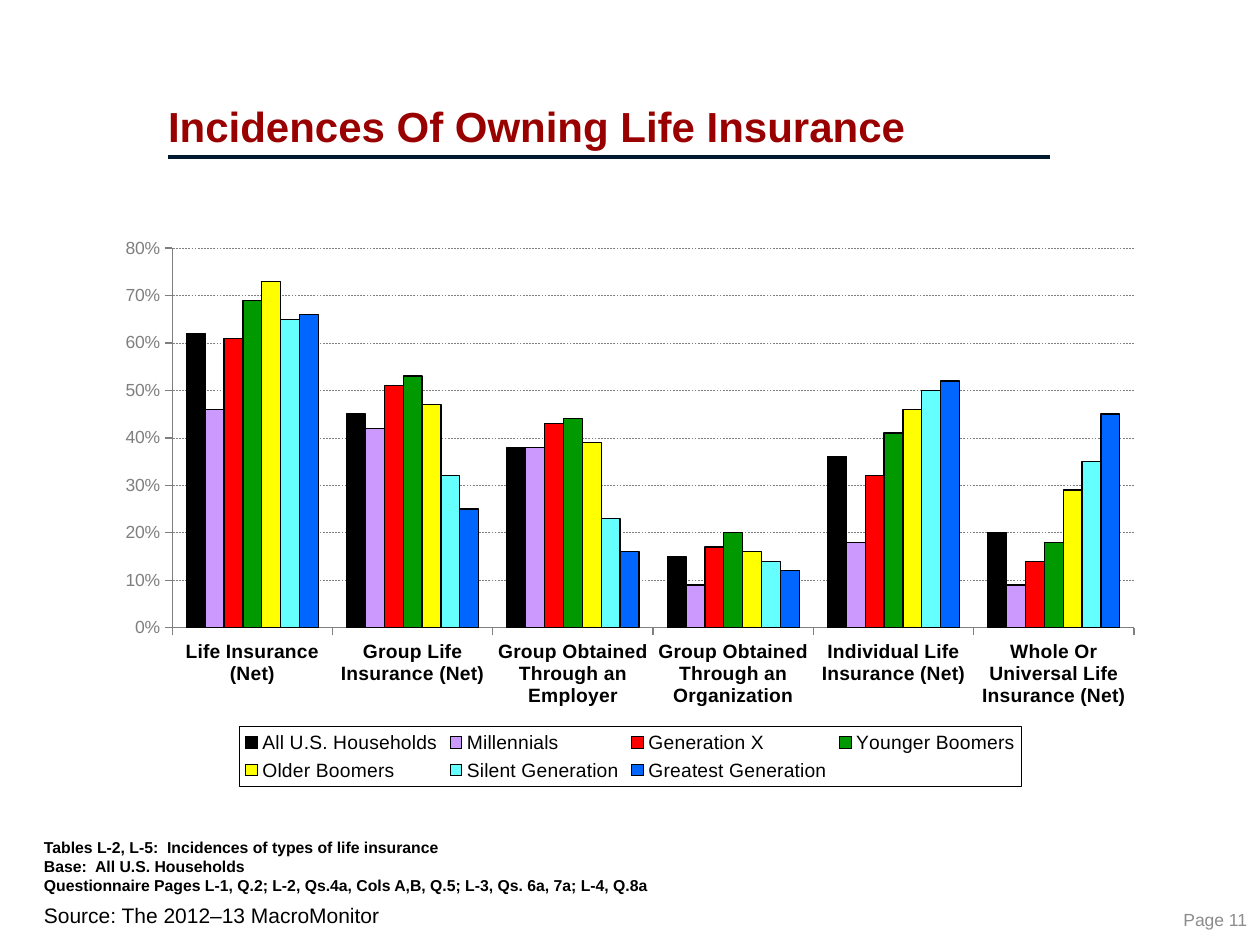
"""Builds a slide with a clustered column chart of life insurance ownership by generation."""
from dataclasses import dataclass

from lxml import etree
from pptx import Presentation
from pptx.chart.data import CategoryChartData
from pptx.dml.color import RGBColor
from pptx.enum.chart import XL_CHART_TYPE, XL_LEGEND_POSITION, XL_TICK_MARK
from pptx.enum.dml import MSO_LINE
from pptx.enum.shapes import MSO_CONNECTOR
from pptx.enum.text import MSO_ANCHOR, PP_ALIGN
from pptx.oxml.ns import qn
from pptx.util import Pt

COLUMN = XL_CHART_TYPE.COLUMN_CLUSTERED
BOTTOM_LEGEND = XL_LEGEND_POSITION.BOTTOM
OUTSIDE = XL_TICK_MARK.OUTSIDE
DASH = MSO_LINE.DASH
STRAIGHT = MSO_CONNECTOR.STRAIGHT
TOP, MIDDLE, BOTTOM = MSO_ANCHOR.TOP, MSO_ANCHOR.MIDDLE, MSO_ANCHOR.BOTTOM
LEFT, RIGHT = PP_ALIGN.LEFT, PP_ALIGN.RIGHT

EMU_PER_PX = 914400 / 126
FONT = "Arial"
COLORS = {
    "black": "000000", "title": "990000", "rule": "00192F",
    "axis": "7F7F7F", "page": "8C8C8C", "violet": "CC99FF",
    "red": "FF0000", "green": "009900", "yellow": "FFFF00",
    "cyan": "66FFFF", "blue": "0066FF",
}


@dataclass
class Box:
    left: int
    top: int
    width: int
    height: int


@dataclass
class Label:
    box: Box
    lines: list[str]
    size: int
    color: str
    bold: bool = False
    anchor: MSO_ANCHOR = TOP
    align: PP_ALIGN = LEFT
    insets: tuple[int, int, int, int] = (13, 6, 13, 6)
    spacing: float = 1.0


@dataclass
class Series:
    name: str
    color: str
    values: tuple[float, ...]


LABELS = [
    Label(Box(168, 10, 903, 147), ["Incidences Of Owning Life Insurance"], 24, "title",
          bold=True, anchor=BOTTOM, insets=(0, 6, 0, 6), spacing=0.8),
    Label(Box(0, 809, 885, 102), [
        "Tables L-2, L-5:  Incidences of types of life insurance",
        "Base:  All U.S. Households",
        "Questionnaire Pages L-1, Q.2; L-2, Qs.4a, Cols A,B, Q.5; L-3, Qs. 6a, 7a; L-4, Q.8a",
    ], 9, "black", bold=True, anchor=BOTTOM, insets=(44, 16, 0, 16)),
    Label(Box(31, 897, 1081, 38), ["Source: The 2012–13 MacroMonitor"], 12, "black"),
    Label(Box(1167, 902, 93, 34), ["Page 11"], 10, "page", anchor=MIDDLE, align=RIGHT),
]
CHART = Box(105, 228, 1050, 559)
PLOT = Box(172, 248, 962, 380)
LEGEND = Box(239, 727, 782, 60)
CATEGORIES = [
    "Life Insurance (Net)", "Group Life Insurance (Net)",
    "Group Obtained Through an Employer", "Group Obtained Through an Organization",
    "Individual Life Insurance (Net)", "Whole Or Universal Life Insurance (Net)",
]
SERIES = [
    Series("All U.S. Households", "black", (0.62, 0.45, 0.38, 0.15, 0.36, 0.2)),
    Series("Millennials", "violet", (0.46, 0.42, 0.38, 0.09, 0.18, 0.09)),
    Series("Generation X", "red", (0.61, 0.51, 0.43, 0.17, 0.32, 0.14)),
    Series("Younger Boomers", "green", (0.69, 0.53, 0.44, 0.2, 0.41, 0.18)),
    Series("Older Boomers", "yellow", (0.73, 0.47, 0.39, 0.16, 0.46, 0.29)),
    Series("Silent Generation", "cyan", (0.65, 0.32, 0.23, 0.14, 0.5, 0.35)),
    Series("Greatest Generation", "blue", (0.66, 0.25, 0.16, 0.12, 0.52, 0.45)),
]


def px(n: int) -> int:
    return round(n * EMU_PER_PX)


def place(box: Box) -> tuple[int, int, int, int]:
    return px(box.left), px(box.top), px(box.width), px(box.height)


def rgb(name: str) -> RGBColor:
    return RGBColor.from_string(COLORS[name])


def style_font(font, size: int, color: str, bold: bool = False) -> None:
    font.name, font.size, font.bold = FONT, Pt(size), bold
    font.color.rgb = rgb(color)


def style_line(line, color: str, width: float) -> None:
    line.color.rgb = rgb(color)
    line.width = Pt(width)


def add_label(s, label: Label) -> None:
    tf = s.shapes.add_textbox(*place(label.box)).text_frame
    tf.word_wrap = True
    tf.vertical_anchor = label.anchor
    tf.margin_left, tf.margin_top, tf.margin_right, tf.margin_bottom = map(px, label.insets)
    p = tf.paragraphs[0]
    p.alignment, p.line_spacing = label.align, label.spacing
    for i, text in enumerate(label.lines):
        if i:
            p.add_line_break()
        r = p.add_run()
        r.text = text
        style_font(r.font, label.size, label.color, label.bold)


def add_rule(s, left: int, right: int, y: int) -> None:
    line = s.shapes.add_connector(STRAIGHT, px(left), px(y), px(right), px(y))
    style_line(line.line, "rule", 2)
    etree.SubElement(line.element.spPr, qn("a:effectLst"))


def set_layout(parent, box: Box, inner: bool = False) -> None:
    for old in parent.findall(qn("c:layout")):
        parent.remove(old)
    layout = etree.Element(qn("c:layout"))
    manual = etree.SubElement(layout, qn("c:manualLayout"))
    settings = {"layoutTarget": "inner"} if inner else {}
    settings |= {
        "xMode": "edge", "yMode": "edge",
        "x": f"{(box.left - CHART.left) / CHART.width:.3f}",
        "y": f"{(box.top - CHART.top) / CHART.height:.3f}",
        "w": f"{box.width / CHART.width:.3f}",
        "h": f"{box.height / CHART.height:.3f}",
    }
    for tag, val in settings.items():
        etree.SubElement(manual, qn(f"c:{tag}")).set("val", val)
    parent.insert(0 if inner else 1, layout)


def add_legend(chart) -> None:
    chart.has_legend = True
    legend = chart.legend
    legend.position = BOTTOM_LEGEND
    legend.include_in_layout = False
    style_font(legend.font, 11, "black")
    el = chart.element.find(f".//{qn('c:legend')}")
    set_layout(el, LEGEND)
    sp_pr = etree.Element(qn("c:spPr"))
    ln = etree.SubElement(sp_pr, qn("a:ln"), w=str(Pt(0.75)))
    fill = etree.SubElement(ln, qn("a:solidFill"))
    etree.SubElement(fill, qn("a:srgbClr"), val=COLORS["black"])
    el.find(qn("c:txPr")).addprevious(sp_pr)


def add_ownership_chart(s) -> None:
    data = CategoryChartData(number_format="0%")
    data.categories = CATEGORIES
    for item in SERIES:
        data.add_series(item.name, item.values)
    chart = s.shapes.add_chart(COLUMN, *place(CHART), data).chart
    chart.has_title = False
    style_font(chart.font, 10, "black")
    plot = chart.plots[0]
    plot.gap_width, plot.overlap, plot.vary_by_categories = 150, 0, False
    for series, item in zip(plot.series, SERIES):
        series.format.fill.solid()
        series.format.fill.fore_color.rgb = rgb(item.color)
        style_line(series.format.line, "black", 0.75)
    cat, val = chart.category_axis, chart.value_axis
    for axis in (cat, val):
        axis.major_tick_mark = OUTSIDE
        style_line(axis.format.line, "axis", 0.75)
    style_font(cat.tick_labels.font, 11, "black", bold=True)
    style_font(val.tick_labels.font, 10, "axis")
    val.tick_labels.number_format = "0%"
    val.tick_labels.number_format_is_linked = False
    val.minimum_scale, val.maximum_scale, val.major_unit = 0, 0.8, 0.1
    val.has_major_gridlines = True
    grid = val.major_gridlines.format.line
    style_line(grid, "axis", 0.25)
    grid.dash_style = DASH
    set_layout(chart.element.find(f".//{qn('c:plotArea')}"), PLOT, inner=True)
    add_legend(chart)


def main() -> None:
    prs = Presentation()
    prs.slide_width, prs.slide_height = px(1260), px(945)
    s = prs.slides.add_slide(prs.slide_layouts[6])
    add_rule(s, 168, 1050, 157)
    add_ownership_chart(s)
    for label in LABELS:
        add_label(s, label)
    prs.save("out.pptx")


if __name__ == "__main__":
    main()
